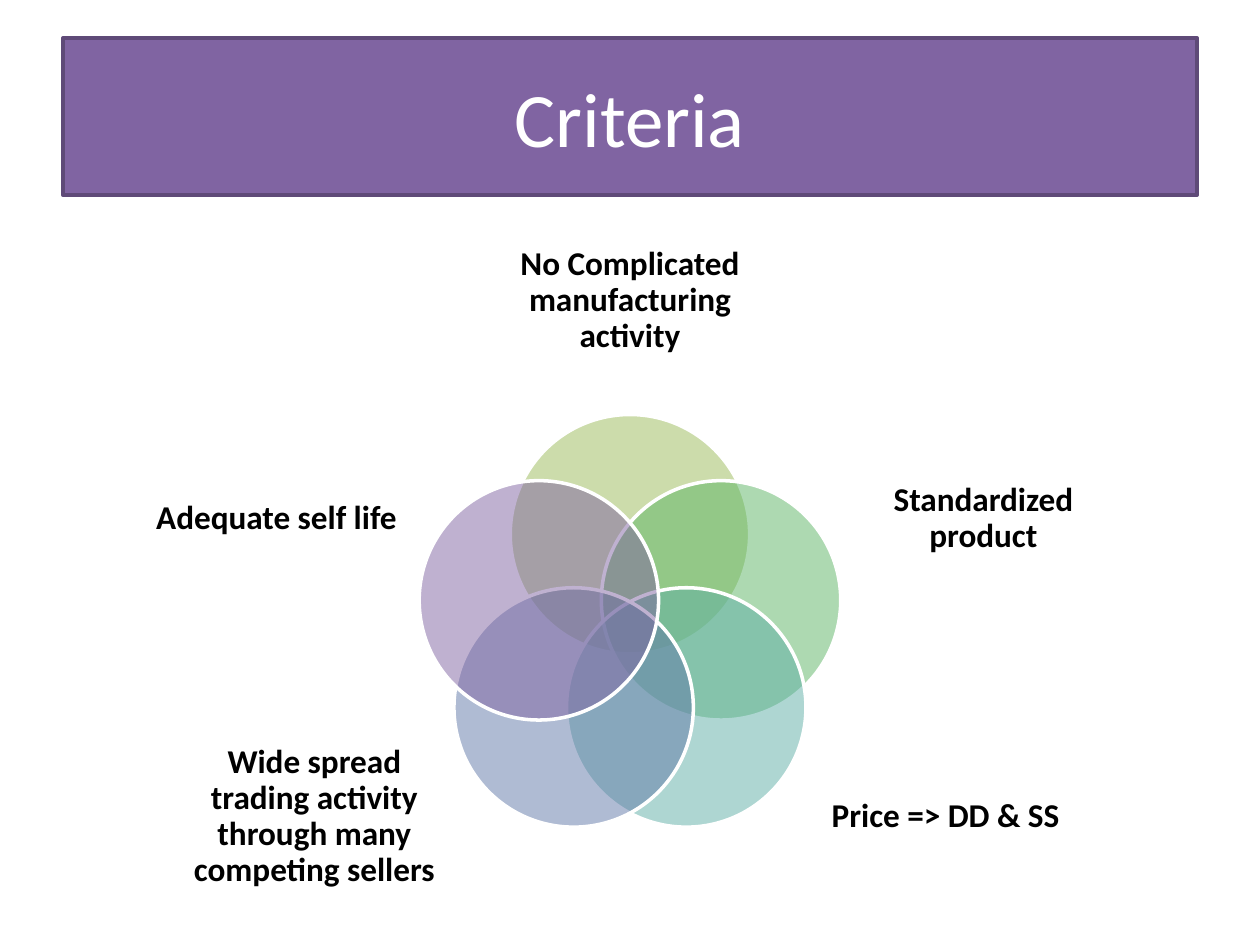
import math
from dataclasses import dataclass

from lxml import etree
from pptx import Presentation
from pptx import util as u
from pptx.dml.color import RGBColor
from pptx.enum import shapes, text
from pptx.oxml.ns import qn

FONT = "Calibri"
CENTER_X, CENTER_Y = 5, 5
ORBIT = 0.76
DIAMETER = 1.9


@dataclass
class Criterion:
    label: str
    color: str
    left: float
    top: float
    width: float = 1.97
    height: float = 1.38


CRITERIA = [
    Criterion("No Complicated manufacturing activity", "9BBB59", 3.9, 1.75, 2.2, 1.27),
    Criterion("Standardized product", "5CB565", 6.82, 3.43),
    Criterion("Price => DD & SS", "5EAFA6", 6.52, 5.79),
    Criterion("Wide spread trading activity through many competing sellers",
              "6179A8", 1.51, 5.79),
    Criterion("Adequate self life", "8064A2", 1.21, 3.43),
]


def rgb(color: str) -> RGBColor:
    return RGBColor.from_string(color)


def style_shape(shape, fill: str, line: str) -> None:
    shape.shadow.inherit = False
    shape.fill.solid()
    shape.fill.fore_color.rgb = rgb(fill)
    shape.line.color.rgb = rgb(line)
    shape.line.width = u.Pt(2)


def write_text(shape, content: str, size: float, color: str, bold: bool = False):
    frame = shape.text_frame
    frame.text = content
    frame.word_wrap = True
    frame.vertical_anchor = text.MSO_ANCHOR.MIDDLE
    paragraph = frame.paragraphs[0]
    paragraph.alignment = text.PP_ALIGN.CENTER
    font = paragraph.runs[0].font
    font.name, font.size, font.bold = FONT, u.Pt(size), bold
    font.color.rgb = rgb(color)
    return paragraph


def add_title(slide, content: str) -> None:
    banner = slide.shapes.add_shape(
        shapes.MSO_SHAPE.RECTANGLE,
        u.Inches(0.5), u.Inches(0.3), u.Inches(9), u.Inches(1.25))
    style_shape(banner, "8064A2", "5F4A78")
    write_text(banner, content, 44, "FFFFFF")


def add_circle(slide, color: str, angle: float) -> None:
    """Add a half-transparent circle at an angle clockwise from the top."""
    left = CENTER_X + ORBIT * math.sin(angle) - DIAMETER / 2
    top = CENTER_Y - ORBIT * math.cos(angle) - DIAMETER / 2
    circle = slide.shapes.add_shape(
        shapes.MSO_SHAPE.OVAL,
        u.Inches(left), u.Inches(top), u.Inches(DIAMETER), u.Inches(DIAMETER))
    style_shape(circle, color, "FFFFFF")
    fill_color = circle.fill._xPr.find(qn("a:solidFill"))[0]
    etree.SubElement(fill_color, qn("a:alpha"), val="50000")


def add_label(slide, criterion: Criterion) -> None:
    box = slide.shapes.add_textbox(
        u.Inches(criterion.left), u.Inches(criterion.top),
        u.Inches(criterion.width), u.Inches(criterion.height))
    frame = box.text_frame
    frame.margin_left = frame.margin_right = 0
    frame.margin_top = frame.margin_bottom = 0
    paragraph = write_text(box, criterion.label, 19, "000000", bold=True)
    paragraph.line_spacing = 0.9


def main() -> None:
    presentation = Presentation()
    presentation.slide_width = u.Inches(10)
    presentation.slide_height = u.Inches(7.5)
    slide = presentation.slides.add_slide(presentation.slide_layouts[6])

    # Title banner
    add_title(slide, "Criteria")

    # Venn circles, evenly spaced around the centre, with their labels
    for index, criterion in enumerate(CRITERIA):
        add_circle(slide, criterion.color, index * math.tau / len(CRITERIA))
        add_label(slide, criterion)

    presentation.save("out.pptx")


if __name__ == "__main__":
    main()
